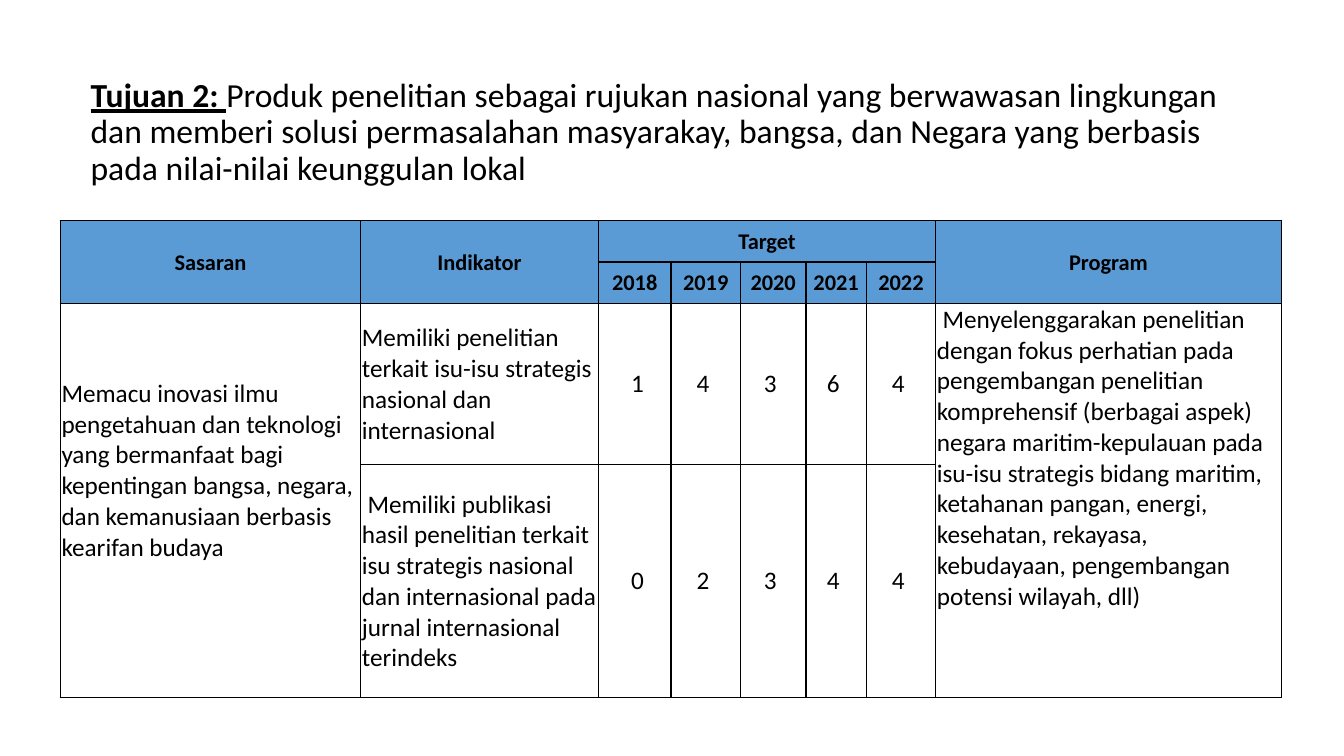
from dataclasses import dataclass

from lxml.etree import SubElement
from pptx import Presentation
from pptx.dml.color import RGBColor
from pptx.enum.text import MSO_ANCHOR, MSO_AUTO_SIZE, PP_ALIGN
from pptx.oxml.ns import qn
from pptx.table import Table, _Cell
from pptx.text.text import TextFrame
from pptx.util import Cm, Pt

COLORS = {"ink": "000000", "header": "5B9BD5"}
FONT = "Calibri"
COLUMN_WIDTHS = [7.57, 5.99, 1.83, 1.75, 1.65, 1.52, 1.75, 8.71]
ROW_HEIGHTS = [1.04, 1.04, 4.06, 5.87]
HEADER_ROWS = 2
CELL_INSET = 0.03


@dataclass
class Entry:
    row: int
    column: int
    text: str
    rows: int = 1
    columns: int = 1
    centered: bool = True
    anchor: MSO_ANCHOR = MSO_ANCHOR.MIDDLE
    bottom: float = 0


def write(frame: TextFrame, text: str, *, size: float, bold: bool = False,
          underline: bool = False, align: PP_ALIGN = PP_ALIGN.LEFT) -> None:
    """Append a formatted run to the first paragraph."""
    paragraph = frame.paragraphs[0]
    paragraph.alignment = align
    run = paragraph.add_run()
    run.text = text
    run.font.name = FONT
    run.font.size = Pt(size)
    run.font.bold = bold
    run.font.underline = underline
    run.font.color.rgb = RGBColor.from_string(COLORS["ink"])


def add_borders(cell: _Cell) -> None:
    properties = cell._tc.get_or_add_tcPr()
    for side in ("a:lnL", "a:lnR", "a:lnT", "a:lnB"):
        line = SubElement(properties, qn(side), w=str(Pt(1)))
        fill = SubElement(line, qn("a:solidFill"))
        SubElement(fill, qn("a:srgbClr"), val=COLORS["ink"])


def fill_entry(table: Table, entry: Entry) -> None:
    cell = table.cell(entry.row, entry.column)
    if entry.rows > 1 or entry.columns > 1:
        cell.merge(table.cell(entry.row + entry.rows - 1,
                              entry.column + entry.columns - 1))
    cell.margin_left = cell.margin_right = cell.margin_top = Cm(CELL_INSET)
    cell.margin_bottom = Cm(entry.bottom)
    cell.vertical_anchor = entry.anchor
    is_header = entry.row < HEADER_ROWS
    write(cell.text_frame, entry.text, size=16 if is_header else 18, bold=is_header,
          align=PP_ALIGN.CENTER if entry.centered else PP_ALIGN.LEFT)


# Contents of the table
entries = [
    Entry(0, 0, "Sasaran", rows=2),
    Entry(0, 1, "Indikator", rows=2),
    Entry(0, 2, "Target", columns=5),
    Entry(0, 7, "Program", rows=2),
    Entry(2, 0, "Memacu inovasi ilmu pengetahuan dan teknologi yang bermanfaat bagi "
          "kepentingan bangsa, negara, dan kemanusiaan berbasis kearifan budaya",
          rows=2, centered=False, bottom=1.52),
    Entry(2, 1, "Memiliki penelitian terkait isu-isu strategis nasional dan internasional",
          centered=False),
    Entry(3, 1, " Memiliki publikasi hasil penelitian terkait isu strategis nasional dan "
          "internasional pada jurnal internasional terindeks", centered=False),
    Entry(2, 7, " Menyelenggarakan penelitian dengan fokus perhatian pada pengembangan "
          "penelitian komprehensif (berbagai aspek) negara maritim-kepulauan pada "
          "isu-isu strategis bidang maritim, ketahanan pangan, energi, kesehatan, "
          "rekayasa, kebudayaan, pengembangan potensi wilayah, dll)",
          rows=2, centered=False, anchor=MSO_ANCHOR.TOP),
]
yearly_rows = [
    ["2018", "2019", "2020", "2021", "2022"],
    [" 1", "4 ", "3 ", "6 ", "4 "],
    [" 0", "2 ", "3 ", "4 ", "4 "],
]
entries += [Entry(row, column, text)
            for row, values in enumerate(yearly_rows, start=1)
            for column, text in enumerate(values, start=2)]

deck = Presentation()
deck.slide_width, deck.slide_height = Cm(33.87), Cm(19.05)
slide = deck.slides.add_slide(deck.slide_layouts[5])

# Goal statement
goal = slide.shapes.title
goal.left, goal.top, goal.width, goal.height = Cm(2.03), Cm(1.98), Cm(29.21), Cm(1.8)
goal_frame = goal.text_frame
goal_frame.word_wrap = True
goal_frame.auto_size = MSO_AUTO_SIZE.NONE
goal_frame.vertical_anchor = MSO_ANCHOR.TOP
goal_frame.margin_top = 0
goal_frame.paragraphs[0].line_spacing = 0.9
write(goal_frame, "Tujuan 2: ", size=24, bold=True, underline=True)
write(goal_frame, "Produk penelitian sebagai rujukan nasional yang berwawasan lingkungan "
      "dan memberi solusi permasalahan masyarakay, bangsa, dan Negara yang berbasis "
      "pada nilai-nilai keunggulan lokal", size=24)

# Target table
targets = slide.shapes.add_table(
    len(ROW_HEIGHTS), len(COLUMN_WIDTHS), Cm(1.52), Cm(5.56),
    Cm(sum(COLUMN_WIDTHS)), Cm(sum(ROW_HEIGHTS))).table
targets.first_row = targets.horz_banding = False
for column, width in zip(targets.columns, COLUMN_WIDTHS):
    column.width = Cm(width)
for index, (row, height) in enumerate(zip(targets.rows, ROW_HEIGHTS)):
    row.height = Cm(height)
    for cell in row.cells:
        add_borders(cell)
        if index < HEADER_ROWS:
            cell.fill.solid()
            cell.fill.fore_color.rgb = RGBColor.from_string(COLORS["header"])
        else:
            cell.fill.background()
for entry in entries:
    fill_entry(targets, entry)

deck.save("out.pptx")
